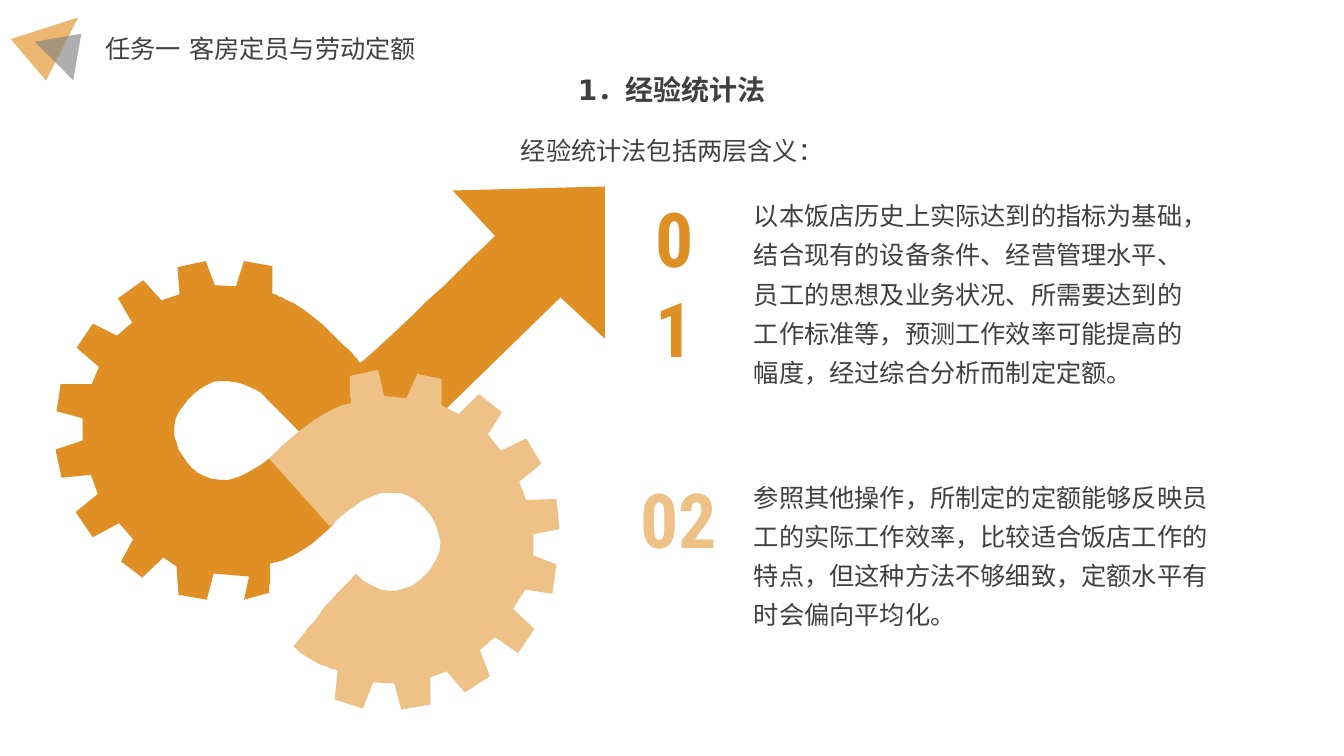
from dataclasses import dataclass

from lxml.etree import SubElement
from pptx import Presentation
from pptx.dml.color import RGBColor
from pptx.enum.shapes import MSO_SHAPE
from pptx.enum.text import MSO_ANCHOR, MSO_AUTO_SIZE, PP_ALIGN
from pptx.oxml.ns import qn
from pptx.util import Cm, Pt


@dataclass(frozen=True)
class Theme:
    """Colours, fonts and type sizes of the slide."""
    orange: str = "E08F24"
    sand: str = "EEC186"
    mark_orange: str = "E18E1F"
    mark_grey: str = "808080"
    ink: str = "404040"
    heading_font: str = "DejaVu Sans"
    body_font: str = "Arial"
    number_font: str = "Roboto Condensed"
    body_size: int = 18
    title_size: int = 20
    number_size: int = 54


@dataclass(frozen=True)
class Box:
    """A rectangle in centimetres."""
    left: float
    top: float
    width: float
    height: float

    def lengths(self):
        """Return left, top, width and height as lengths."""
        return Cm(self.left), Cm(self.top), Cm(self.width), Cm(self.height)


THEME = Theme()
GEAR_UNIT = Cm(0.0254)
GEAR_ORIGIN = (55, 185)
CURVE_STEPS = 12

ARROW_GEAR = [
    (286, 438), (347, 499), (347, 499, 316, 548, 268, 559),
    (268, 572, 267, 588, 267, 588), (242, 595), (247, 572), (212, 569),
    (205, 595), (177, 590), (175, 562), (162, 553), (141, 573), (120, 557),
    (132, 535), (118, 519), (92, 533), (75, 508), (97, 490), (90, 471),
    (61, 474), (55, 446), (82, 437), (82, 415), (56, 408), (60, 381),
    (91, 381), (98, 364), (76, 345), (92, 321), (116, 333), (131, 320),
    (117, 296), (142, 278), (160, 298), (178, 292), (176, 265), (204, 259),
    (213, 283), (234, 284), (242, 259), (270, 264), (270, 291),
    (270, 291, 292, 299, 310, 314), (328, 329, 357, 357, 357, 360),
    (358, 364, 491, 234, 491, 234), (449, 189), (600, 185), (600, 336),
    (556, 295), (357, 489), (258, 389), (258, 389, 224, 366, 198, 386),
    (174, 405, 164, 426, 181, 452), (197, 477, 228, 496, 286, 438),
]
OPEN_GEAR = [
    (327, 522), (267, 455), (267, 455, 313, 406, 348, 400),
    (347, 391, 347, 373, 347, 373), (375, 367), (381, 393), (403, 395),
    (414, 371), (438, 376), (438, 402), (455, 411), (475, 391), (498, 409),
    (484, 431), (497, 447), (522, 435), (537, 460), (515, 478), (522, 496),
    (552, 495), (555, 525), (529, 530), (529, 551), (552, 560), (548, 589),
    (521, 585), (509, 604), (530, 624), (514, 648), (491, 632), (476, 645),
    (486, 671), (461, 687), (443, 666), (427, 672), (427, 699), (398, 704),
    (391, 678), (370, 677), (360, 703), (332, 694), (335, 665),
    (335, 665, 308, 659, 291, 641), (315, 612, 321, 602, 353, 569),
    (353, 569, 383, 603, 417, 575), (461, 539, 421, 493, 396, 489),
    (371, 486, 355, 497, 327, 522),
]


def paint(shape, color):
    """Fill a shape with one colour, without line or shadow."""
    shape.shadow.inherit = False
    shape.fill.solid()
    shape.fill.fore_color.rgb = RGBColor.from_string(color)
    shape.line.fill.background()


def write(shape, text, font, size, color, bold=False, align=PP_ALIGN.LEFT, spacing=1.0):
    """Put one formatted run into a text shape."""
    frame = shape.text_frame
    frame.word_wrap = True
    frame.auto_size = MSO_AUTO_SIZE.NONE
    frame.vertical_anchor = MSO_ANCHOR.TOP
    paragraph = frame.paragraphs[0]
    paragraph.alignment = align
    paragraph.line_spacing = spacing
    run = paragraph.add_run()
    run.text = text
    run.font.name = font
    run.font.size = Pt(size)
    run.font.bold = bold
    run.font.color.rgb = RGBColor.from_string(color)
    SubElement(run.font._element, qn("a:ea")).set("typeface", font)


def add_text(slide, box, *content, **style):
    """Add a text box and write into it."""
    write(slide.shapes.add_textbox(*box.lengths()), *content, **style)


def add_header(slide, box, text):
    """Place the two translucent triangles and the chapter line."""
    triangles = [
        (Box(box.left, box.top, 1.37, 1.65), 49.7, THEME.mark_orange),
        (Box(box.left + 0.36, box.top + 0.56, 1.37, 0.97), 45.1, THEME.mark_grey),
    ]
    for triangle_box, rotation, color in triangles:
        triangle = slide.shapes.add_shape(MSO_SHAPE.ISOSCELES_TRIANGLE, *triangle_box.lengths())
        paint(triangle, color)
        triangle.rotation = rotation
        fill_color = triangle._element.spPr.find(qn("a:solidFill"))[0]
        SubElement(fill_color, qn("a:alpha")).set("val", "63000")
    add_text(slide, Box(box.left + 1.75, box.top + 0.56, box.width - 1.75, 1.02),
             text, THEME.heading_font, THEME.body_size, THEME.ink)


def add_heading(slide, box, title, subtitle):
    """Place the centred title and the line below it."""
    placeholder = slide.shapes.title
    placeholder.left, placeholder.top, placeholder.width, placeholder.height = Box(
        box.left + 1.3, box.top, 11.4, 1.37).lengths()
    write(placeholder, title, THEME.heading_font, THEME.title_size, THEME.ink,
          bold=True, align=PP_ALIGN.CENTER, spacing=1.5)
    add_text(slide, Box(box.left, box.top + 1.63, box.width, 1.27), subtitle,
             THEME.heading_font, THEME.body_size, THEME.ink,
             align=PP_ALIGN.CENTER, spacing=1.5)


def curve_points(start, curve):
    """Return points along a cubic curve."""
    controls = [start, curve[:2], curve[2:4], curve[4:]]
    points = []
    for step in range(1, CURVE_STEPS + 1):
        t = step / CURVE_STEPS
        weights = ((1 - t) ** 3, 3 * t * (1 - t) ** 2, 3 * t * t * (1 - t), t ** 3)
        points.append(tuple(sum(weight * control[axis] for weight, control in zip(weights, controls))
                            for axis in (0, 1)))
    return points


def add_gears(slide, box):
    """Draw the interlocking gears from the top left of the box."""
    origin = [Cm(length) - offset * GEAR_UNIT
              for length, offset in zip((box.left, box.top), GEAR_ORIGIN)]
    for outline, color in ((ARROW_GEAR, THEME.orange), (OPEN_GEAR, THEME.sand)):
        points = [outline[0]]
        for segment in outline[1:]:
            points += [segment] if len(segment) == 2 else curve_points(points[-1], segment)
        builder = slide.shapes.build_freeform(*points[0], scale=GEAR_UNIT)
        builder.add_line_segments(points[1:], close=True)
        paint(builder.convert_to_shape(*origin), color)


def add_meaning(slide, box, number, number_width, color, text):
    """Place a large number with its explanation to the right."""
    add_text(slide, Box(box.left, box.top, number_width, 2.57), number,
             THEME.number_font, THEME.number_size, color, bold=True, align=PP_ALIGN.CENTER)
    add_text(slide, Box(box.left + 2.95, box.top, box.width - 2.95, box.height), text,
             THEME.body_font, THEME.body_size, THEME.ink, spacing=1.3)


def main():
    """Build the slide and save it."""
    presentation = Presentation()
    presentation.slide_width, presentation.slide_height = Cm(33.87), Cm(19.05)
    slide = presentation.slides.add_slide(presentation.slide_layouts[5])
    add_header(slide, Box(0.66, 0.15, 21.56, 1.65), "任务一 客房定员与劳动定额")
    add_gears(slide, Box(1.4, 4.7, 13.86, 13.18))
    add_meaning(slide, Box(15.8, 4.7, 14.46, 5.26), "01", 2.39, THEME.orange,
                "以本饭店历史上实际达到的指标为基础，结合现有的设备条件、经营管理水平、员工的思想及业务状况、"
                "所需要达到的工作标准等，预测工作效率可能提高的幅度，经过综合分析而制定定额。")
    add_meaning(slide, Box(15.8, 11.79, 14.99, 4.17), "02", 2.59, THEME.sand,
                "参照其他操作，所制定的定额能够反映员工的实际工作效率，比较适合饭店工作的特点，"
                "但这种方法不够细致，定额水平有时会偏向平均化。")
    add_heading(slide, Box(9.93, 1.27, 14.02, 2.9), "1．经验统计法", "经验统计法包括两层含义：")
    presentation.save("out.pptx")


if __name__ == "__main__":
    main()
